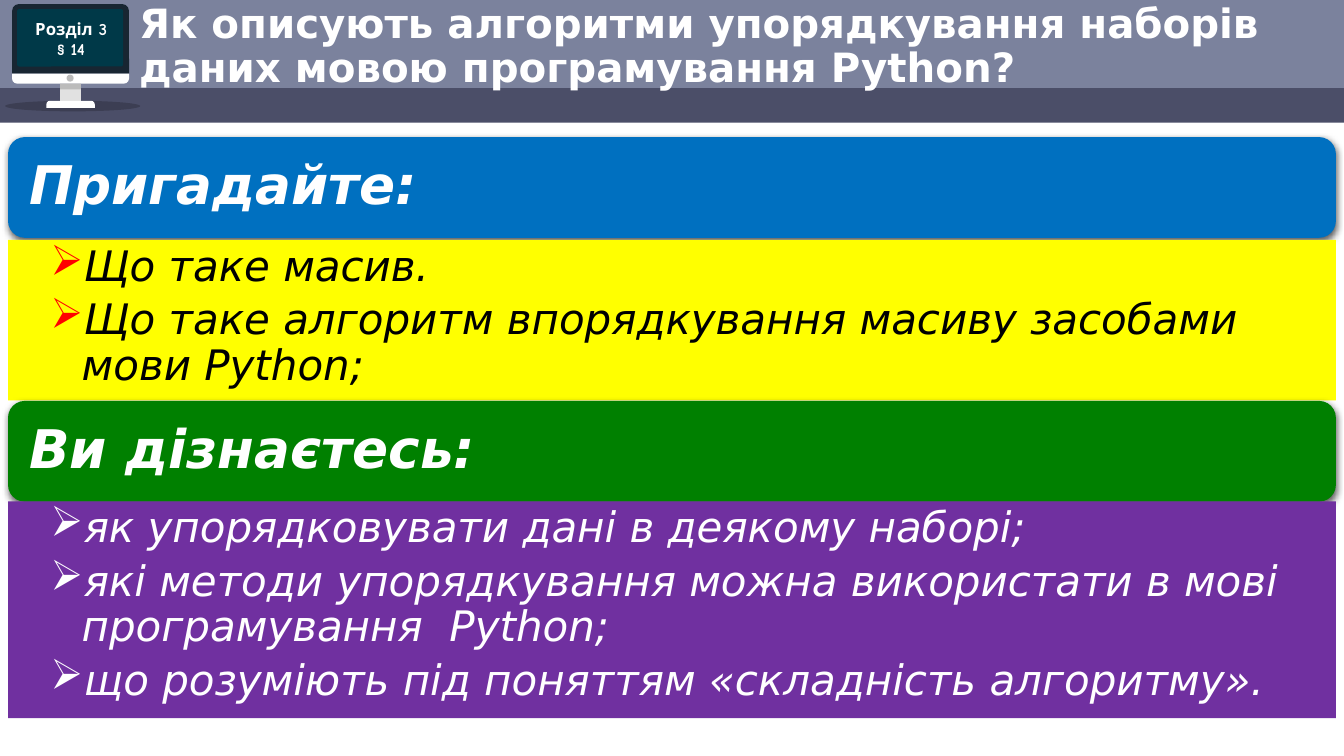
"""Builds the lesson opening slide on sorting data sets in Python."""
from dataclasses import dataclass

from lxml import etree
from pptx import Presentation
from pptx.dml.color import RGBColor
from pptx.enum.shapes import MSO_SHAPE
from pptx.enum.text import MSO_ANCHOR, PP_ALIGN
from pptx.oxml.ns import qn
from pptx.util import Emu, Inches, Pt

RECT = MSO_SHAPE.RECTANGLE
OVAL = MSO_SHAPE.OVAL
ROUNDED = MSO_SHAPE.ROUNDED_RECTANGLE
TWO_ROUNDED = MSO_SHAPE.ROUND_2_SAME_RECTANGLE
TOP, MIDDLE = MSO_ANCHOR.TOP, MSO_ANCHOR.MIDDLE
LEFT, CENTER = PP_ALIGN.LEFT, PP_ALIGN.CENTER

WIDTH, HEIGHT = Inches(13.33), Inches(7.5)
MAIN_FONT, LABEL_FONT = "DejaVu Sans", "Comic Neue"
WHITE, BLACK = "FFFFFF", "000000"
HANGING_INDENT = 2.33
PANEL_LEFT, PANEL_WIDTH = 0.6, 98.8
HEADING_HEIGHT = 13.33


@dataclass(frozen=True)
class Box:
    """Place in percent of the slide's width and height."""
    left: float
    top: float
    width: float
    height: float


@dataclass(frozen=True)
class Part:
    """Filled shape of the banner or the monitor."""
    box: Box
    fill: str
    outline: MSO_SHAPE = RECT
    corners: tuple[float, ...] = ()
    opacity: int = 100


@dataclass(frozen=True)
class TextStyle:
    """Type, spacing and insets of a text block."""
    size: float
    color: str = WHITE
    font: str = MAIN_FONT
    bold: bool = False
    italic: bool = False
    align: PP_ALIGN = LEFT
    anchor: MSO_ANCHOR = MIDDLE
    line_spacing: float = 0.9
    space_after: float = 0
    insets: tuple[float, float, float, float] = (0.75, 0.67, 0.75, 0.67)
    bullet_color: str = ""


@dataclass(frozen=True)
class Section:
    """Heading bar with the list panel below it."""
    heading: str
    heading_top: float
    heading_fill: str
    items: tuple[str, ...]
    body: Box
    body_fill: str
    text_color: str
    bullet_color: str


PARTS = (
    Part(Box(0, 0, 100, 12.13), "7B829D"),
    Part(Box(0, 11.65, 100, 4.6), "4B4E68"),
    Part(Box(0.38, 13.33, 10.05, 1.4), BLACK, OVAL, opacity=20),
    Part(Box(0.9, 0.53, 8.7, 9.2), "182632", TWO_ROUNDED, (0.1, 0)),
    Part(Box(0.9, 9.73, 8.7, 1.33), WHITE, TWO_ROUNDED, (0, 0.5)),
    Part(Box(4.47, 11.07, 1.55, 2.27), "E1E1E1"),
    Part(Box(4.47, 11.07, 1.55, 0.74), "BBBBBB"),
    Part(Box(3.45, 13.33, 3.6, 0.95), WHITE, TWO_ROUNDED, (0.5, 0)),
    Part(Box(4.95, 9.87, 0.53, 0.93), "BBBBBB", OVAL),
    Part(Box(1.28, 1.2, 7.88, 7.6), "003948", ROUNDED, (0.036,)),
)

SECTIONS = (
    Section("Пригадайте:", 18.13, "0070C0",
            ("Що таке масив.",
             "Що таке алгоритм впорядкування масиву засобами мови Python;"),
            Box(PANEL_LEFT, 31.73, PANEL_WIDTH, 21.25), "FFFF00", BLACK, "FF0000"),
    Section("Ви дізнаєтесь:", 53.03, "008000",
            ("як упорядковувати дані в деякому наборі;",
             "які методи упорядкування можна використати в мові програмування  Python;",
             "що розуміють під поняттям «складність алгоритму»."),
            Box(PANEL_LEFT, 66.33, PANEL_WIDTH, 28.67), "7030A0", WHITE, WHITE),
)

CHAPTER_STYLE = TextStyle(12, font=LABEL_FONT, bold=True, align=CENTER, line_spacing=1)
TITLE_STYLE = TextStyle(28.8, bold=True)
HEADING_STYLE = TextStyle(38, bold=True, italic=True, space_after=13.3,
                          insets=(1.2, 2.13, 1.2, 2.13))


def across(share: float) -> Emu:
    """Turn a percentage of the slide's width into a length."""
    return Emu(round(WIDTH * share / 100))


def down(share: float) -> Emu:
    """Turn a percentage of the slide's height into a length."""
    return Emu(round(HEIGHT * share / 100))


def rgb(color: str) -> RGBColor:
    """Turn a hex string into a colour."""
    return RGBColor.from_string(color)


def frame(box: Box) -> tuple[Emu, Emu, Emu, Emu]:
    """Give a box as left, top, width and height."""
    return across(box.left), down(box.top), across(box.width), down(box.height)


def add_color(parent, color: str, opacity: int = 100) -> None:
    """Append a colour element to an XML parent."""
    node = etree.SubElement(parent, qn("a:srgbClr"), val=color)
    if opacity < 100:
        etree.SubElement(node, qn("a:alpha"), val=str(opacity * 1000))


def draw_part(slide, part: Part):
    """Draw a filled shape without a line or a shadow."""
    shape = slide.shapes.add_shape(part.outline, *frame(part.box))
    shape.shadow.inherit = False
    shape.line.fill.background()
    shape.fill.solid()
    shape.fill.fore_color.rgb = rgb(part.fill)
    for index, corner in enumerate(part.corners):
        shape.adjustments[index] = corner
    if part.opacity < 100:
        color = shape.element.spPr.find(qn("a:solidFill"))[0]
        etree.SubElement(color, qn("a:alpha"), val=str(part.opacity * 1000))
    return shape


def add_shadow(shape) -> None:
    """Give a shape a soft shadow straight below it."""
    effects = shape.element.spPr.find(qn("a:effectLst"))
    shadow = etree.SubElement(effects, qn("a:outerShdw"), blurRad=str(Pt(4.5)),
                              dist=str(Pt(1.5)), dir="5400000", rotWithShape="0")
    add_color(shadow, BLACK, 63)


def add_bullet(paragraph, color: str) -> None:
    """Give a paragraph an arrow bullet with a hanging indent."""
    properties = paragraph._p.get_or_add_pPr()
    indent = across(HANGING_INDENT)
    properties.set("marL", str(indent))
    properties.set("indent", str(-indent))
    add_color(etree.SubElement(properties, qn("a:buClr")), color)
    etree.SubElement(properties, qn("a:buChar"), char="➢")


def write(shape, lines: tuple[str, ...], style: TextStyle) -> None:
    """Write one paragraph per line into a shape."""
    text = shape.text_frame
    text.word_wrap = True
    text.vertical_anchor = style.anchor
    left, top, right, bottom = style.insets
    text.margin_left, text.margin_right = across(left), across(right)
    text.margin_top, text.margin_bottom = down(top), down(bottom)
    for index, line in enumerate(lines):
        paragraph = text.add_paragraph() if index else text.paragraphs[0]
        paragraph.alignment = style.align
        paragraph.line_spacing = style.line_spacing
        paragraph.space_after = Pt(style.space_after)
        if style.bullet_color:
            add_bullet(paragraph, style.bullet_color)
        run = paragraph.add_run()
        run.text = line
        run.font.name, run.font.size = style.font, Pt(style.size)
        run.font.bold, run.font.italic = style.bold, style.italic
        run.font.color.rgb = rgb(style.color)


def draw_section(slide, section: Section) -> None:
    """Draw a heading bar and its bulleted panel."""
    bar = Box(PANEL_LEFT, section.heading_top, PANEL_WIDTH, HEADING_HEIGHT)
    heading = draw_part(slide, Part(bar, section.heading_fill, ROUNDED))
    add_shadow(heading)
    write(heading, (section.heading,), HEADING_STYLE)
    body = draw_part(slide, Part(section.body, section.body_fill))
    write(body, section.items, TextStyle(
        30, section.text_color, italic=True, anchor=TOP, space_after=6,
        insets=(3.15, 0.67, 2.25, 0.67), bullet_color=section.bullet_color))


def main() -> None:
    """Build and save the slide."""
    deck = Presentation()
    deck.slide_width, deck.slide_height = WIDTH, HEIGHT
    slide = deck.slides.add_slide(deck.slide_layouts[6])
    for part in PARTS:
        draw_part(slide, part)
    chapter = slide.shapes.add_textbox(*frame(Box(0.98, 1.2, 8.63, 7.87)))
    write(chapter, ("Розділ 3", "§ 14"), CHAPTER_STYLE)
    for section in SECTIONS:
        draw_section(slide, section)
    title = slide.shapes.add_textbox(*frame(Box(9.6, 2.4, 87.92, 7.73)))
    write(title, ("Як описують алгоритми упорядкування наборів даних "
                  "мовою програмування Python?",), TITLE_STYLE)
    deck.save("out.pptx")


if __name__ == "__main__":
    main()
